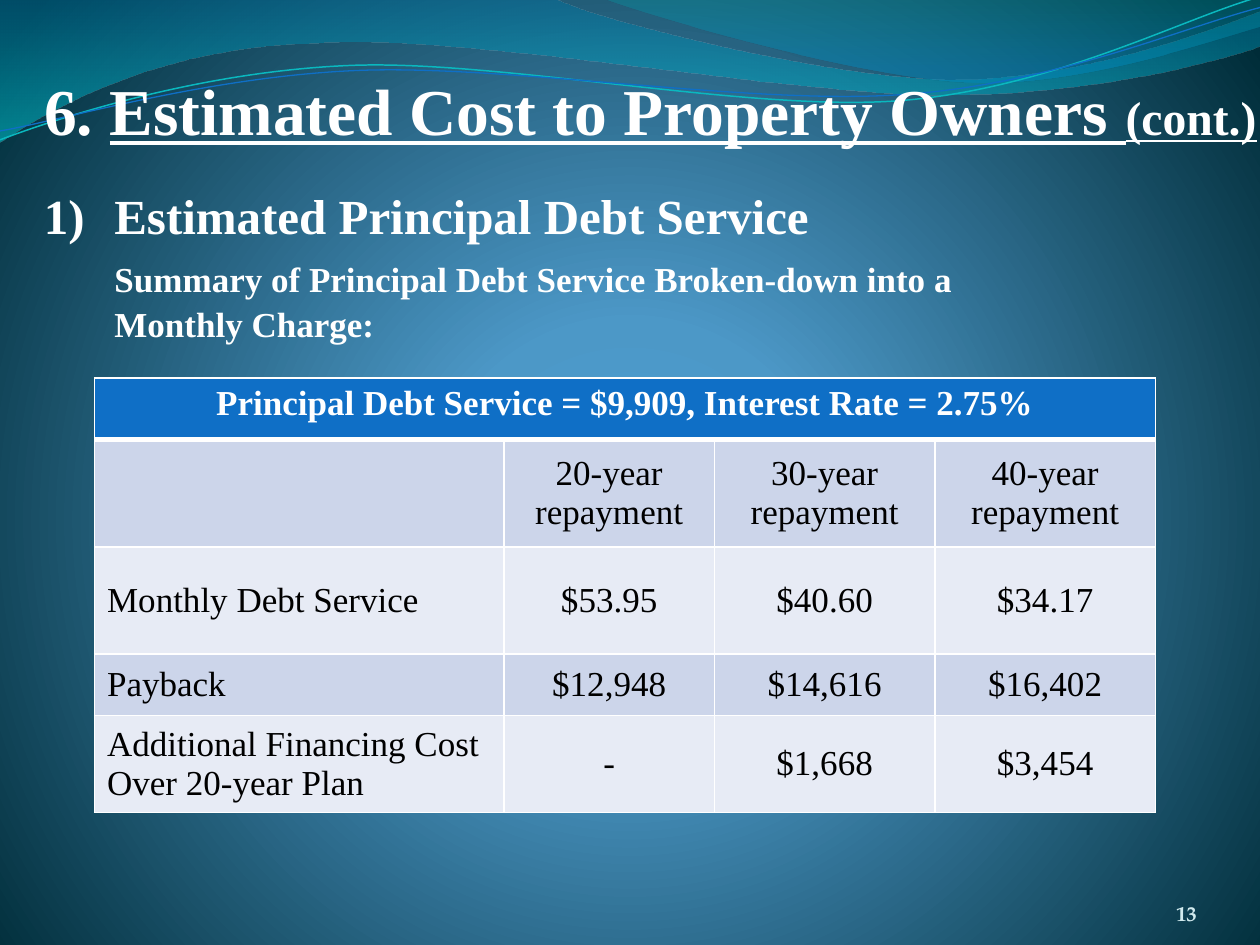
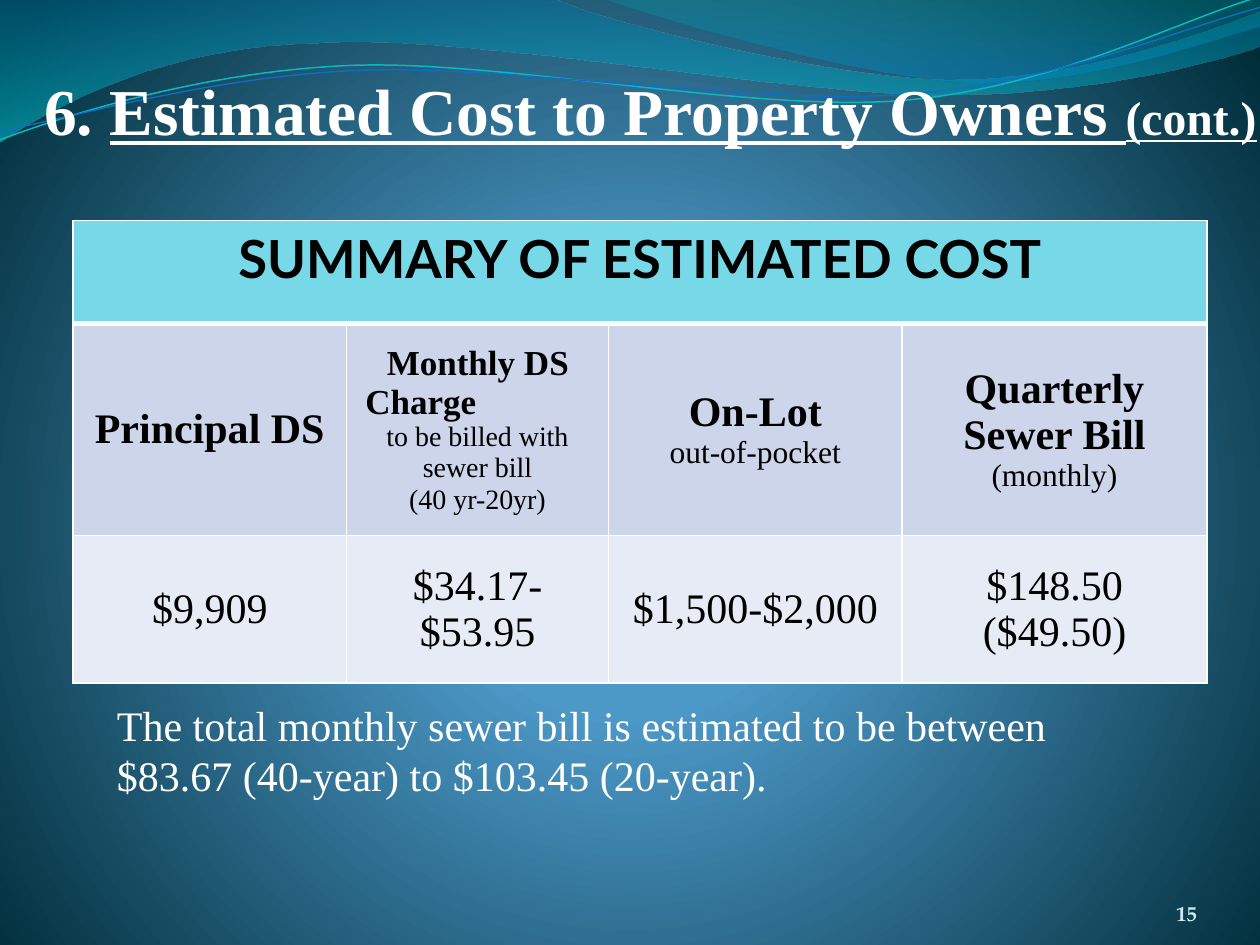
import math

import pptx
import pptx.util
import pptx.dml.color
import pptx.enum.text
import pptx.oxml
import pptx.oxml.ns

Inches, Pt = pptx.util.Inches, pptx.util.Pt
RGB = pptx.dml.color.RGBColor
ALIGN, ANCHOR = pptx.enum.text.PP_ALIGN, pptx.enum.text.MSO_ANCHOR
qn, nsdecls = pptx.oxml.ns.qn, pptx.oxml.ns.nsdecls

WHITE, BLACK = RGB.from_string("FFFFFF"), RGB.from_string("000000")
BLUE, AQUA = RGB.from_string("0F6FC6"), RGB.from_string("77D9E8")
TEAL, PALE = RGB.from_string("0AB8BF"), RGB.from_string("D1EAEE")
BANDS = RGB.from_string("CCD5EA"), RGB.from_string("E7EBF5")
SERIF, SANS, PAGELLA = "Times New Roman", "Lato", "TeX Gyre Pagella"

BACKDROP = (
    [(0, "4AA0D6", 100), (25, "4C98C7", 100), (100, "002C38", 100)],
    '<a:path path="circle"><a:fillToRect l="10000" t="110000" r="10000" b="100000"/></a:path>',
)
DOWN = '<a:lin ang="5400000" scaled="0"/>'
TILT = 357.3
WAVES = [
    {"start": (0, 0), "fill": ([(0, "0074A1", 45), (100, "00C6CF", 55)], DOWN), "segments": [
        (4.4, -0.01),
        (4.76, 0.17, 6.64, 0.63, 7.58, 0.63), (8.53, 0.63, 9.58, 0.26, 10, 0.09),
        (10.01, 0.36),
        (9.83, 0.44, 8.7, 0.76, 7.46, 0.75), (6.22, 0.75, 3.82, 0.28, 2.57, 0.34),
        (1.29, 0.36, 0.46, 0.83, -0.01, 1.13)]},
    {"start": (4.79, -0.01), "fill": ([(0, "00A1A9", 30), (80, "008BBF", 45)], DOWN), "segments": [
        (5.09, 0.11, 6.82, 0.62, 7.69, 0.65), (8.56, 0.69, 9.61, 0.32, 10, 0.21),
        (10, 0)]},
    {"start": (0, 1.11), "line": (TEAL, 0.85), "pivot": (4.99, 0.57), "segments": [
        (0.48, 0.93, 1.58, 0.57, 2.77, 0.52), (3.95, 0.47, 5.93, 0.89, 7.13, 0.8),
        (8.33, 0.71, 9.38, 0.15, 9.98, -0.02)]},
    {"start": (0, 1.04), "line": (BLUE, 0.75), "pivot": (5, 0.59), "segments": [
        (0.47, 0.96, 1.64, 0.61, 2.83, 0.56), (4.03, 0.51, 5.97, 0.84, 7.17, 0.75),
        (8.36, 0.67, 9.41, 0.21, 10, 0.06)]},
]

TITLE_STYLE = {"size": 37.4, "bold": True, "color": WHITE}
TITLE = [[("6. ", TITLE_STYLE),
          ("Estimated Cost to Property Owners ", {**TITLE_STYLE, "underline": True}),
          ("(cont.)", {**TITLE_STYLE, "underline": True, "size": 27.2})]]
INTRO = [
    [("Estimated Principal Debt Service", {"size": 28, "bold": True, "color": WHITE})],
    [("Summary of Principal Debt Service Broken-down into a Monthly Charge:",
      {"size": 20, "bold": True, "color": WHITE})],
]
NOTE = [[("The total monthly sewer bill is estimated to be between "
          "$83.67 (40-year) to $103.45 (20-year).", {"size": 24, "color": WHITE})]]


def lines(size, *texts, bold=False):
    return [[(text, {"size": size, "bold": bold})] for text in texts]


REPAYMENT = {
    "at": (0.75, 3), "cols": [3.25, 1.67, 1.75, 1.75], "rows": [0.49, 0.85, 0.85, 0.49, 0.77],
    "header": [[("Principal Debt Service = $9,909, Interest Rate = 2.75%",
                 {"size": 20, "bold": True, "color": WHITE})]],
    "header_fill": BLUE, "left_cells": {(2, 0), (3, 0), (4, 0)},
    "body": [[lines(20, text) if text else [] for text in row] for row in [
        ["", "20-year repayment", "30-year repayment", "40-year repayment"],
        ["Monthly Debt Service", "$53.95", "$40.60", "$34.17"],
        ["Payback", "$12,948", "$14,616", "$16,402"],
        ["Additional Financing Cost Over 20-year Plan", "-", "$1,668", "$3,454"],
    ]],
}
SUMMARY = {
    "at": (0.58, 1.75), "cols": [2.17, 2.08, 2.33, 2.42], "rows": [0.82, 1.68, 1.17],
    "header": [[("SUMMARY OF ESTIMATED COST", {"size": 30, "bold": True, "name": SANS})]],
    "header_fill": AQUA, "left_cells": set(),
    "body": [
        [lines(24, "Principal DS", bold=True),
         lines(20, "Monthly DS Charge", bold=True)
         + lines(16, "to be billed with sewer bill", "(40 yr-20yr)"),
         lines(24, "On-Lot", bold=True) + lines(18, "out-of-pocket"),
         lines(24, "Quarterly", "Sewer Bill", bold=True) + lines(18, "(monthly)")],
        [lines(24, "$9,909"), lines(24, "$34.17-$53.95"),
         lines(24, "$1,500-$2,000"), lines(24, "$148.50", "($49.50)")],
    ],
}


def write(tf, paragraphs, **layout):
    for i, runs in enumerate(paragraphs):
        p = tf.paragraphs[0] if i == 0 else tf.add_paragraph()
        for key, value in layout.items():
            setattr(p, key, value)
        for text, style in runs:
            r = p.add_run()
            r.text = text
            font = {"name": SERIF, "color": BLACK, "bold": False, **style}
            r.font.color.rgb = font.pop("color")
            r.font.size = Pt(font.pop("size"))
            for key, value in font.items():
                setattr(r.font, key, value)


def indent(p, left, first):
    pPr = p._p.get_or_add_pPr()
    pPr.set("marL", str(Inches(left)))
    pPr.set("indent", str(Inches(first)))
    return pPr


def paint_gradient(owner, fill, stops, direction):
    fill.background()
    gs = "".join(
        f'<a:gs pos="{pos * 1000}"><a:srgbClr val="{color}"><a:alpha val="{alpha * 1000}"/>'
        f'</a:srgbClr></a:gs>' for pos, color, alpha in stops)
    grad = pptx.oxml.parse_xml(
        f'<a:gradFill {nsdecls("a")} rotWithShape="1"><a:gsLst>{gs}</a:gsLst>{direction}</a:gradFill>')
    blank = next(owner.element.iter(qn("a:noFill")))
    blank.getparent().replace(blank, grad)


def place(point, pivot):
    x, y = point
    if pivot:
        angle = math.radians(360 - TILT)
        dx, dy = x - pivot[0], y - pivot[1]
        x = pivot[0] + dx * math.cos(angle) - dy * math.sin(angle)
        y = pivot[1] + dx * math.sin(angle) + dy * math.cos(angle)
    return Inches(x), Inches(y)


def add_wave(s, wave):
    pivot = wave.get("pivot")
    segments = [[place(seg[i:i + 2], pivot) for i in range(0, len(seg), 2)]
                for seg in wave["segments"]]
    builder = s.shapes.build_freeform(*place(wave["start"], pivot), scale=1.0)
    builder.add_line_segments([seg[-1] for seg in segments], close="fill" in wave)
    sp = builder.convert_to_shape()
    sp.shadow.inherit = False
    for step, seg in zip(list(sp.element.iter(qn("a:lnTo"))), segments):
        if len(seg) == 3:
            pts = "".join(f'<a:pt x="{x - sp.left}" y="{y - sp.top}"/>' for x, y in seg)
            step.getparent().replace(step, pptx.oxml.parse_xml(
                f'<a:cubicBezTo {nsdecls("a")}>{pts}</a:cubicBezTo>'))
    if "fill" in wave:
        paint_gradient(sp, sp.fill, *wave["fill"])
        sp.line.fill.background()
    else:
        sp.fill.background()
        sp.rotation = TILT
        color, width = wave["line"]
        sp.line.color.rgb, sp.line.width = color, Pt(width)


def add_text(s, box, paragraphs, **layout):
    tf = s.shapes.add_textbox(*map(Inches, box)).text_frame
    tf.word_wrap = True
    write(tf, paragraphs, **layout)
    return tf


def add_base(prs, number):
    s = prs.slides.add_slide(prs.slide_layouts[5])
    paint_gradient(s, s.background.fill, *BACKDROP)
    for wave in WAVES:
        add_wave(s, wave)
    title = s.shapes.title
    title.left, title.top, title.width, title.height = map(Inches, (0.25, 0.58, 10, 0.83))
    title.element.getparent().append(title.element)
    tf = title.text_frame
    tf.auto_size, tf.word_wrap = pptx.enum.text.MSO_AUTO_SIZE.NONE, True
    tf.vertical_anchor = ANCHOR.TOP
    write(tf, TITLE, alignment=ALIGN.LEFT, line_spacing=0.9)
    number_style = {"size": 12, "name": PAGELLA, "color": PALE, "bold": True}
    tf = add_text(s, (8.67, 6.95, 0.83, 0.4), [[(number, number_style)]], alignment=ALIGN.RIGHT)
    tf.margin_left = tf.margin_top = tf.margin_right = tf.margin_bottom = 0
    tf.vertical_anchor = ANCHOR.BOTTOM
    return s


def set_borders(cell, row):
    widths = {"L": 1, "R": 1, "T": 3 if row == 1 else 1, "B": 3 if row == 0 else 1}
    for i, (side, width) in enumerate(widths.items()):
        cell._tc.get_or_add_tcPr().insert(i, pptx.oxml.parse_xml(
            f'<a:ln{side} {nsdecls("a")} w="{width * 12700}"><a:solidFill>'
            f'<a:srgbClr val="{WHITE}"/></a:solidFill></a:ln{side}>'))


def add_cost_table(s, spec):
    cols, rows = spec["cols"], spec["rows"]
    box = *spec["at"], sum(cols), sum(rows)
    table = s.shapes.add_table(len(rows), len(cols), *map(Inches, box)).table
    for column, width in zip(table.columns, cols):
        column.width = Inches(width)
    for row, height in zip(table.rows, rows):
        row.height = Inches(height)
    table.cell(0, 0).merge(table.cell(0, len(cols) - 1))
    write(table.cell(0, 0).text_frame, spec["header"], alignment=ALIGN.CENTER)
    for i in range(len(rows)):
        for j in range(len(cols)):
            cell = table.cell(i, j)
            cell.fill.solid()
            cell.fill.fore_color.rgb = BANDS[(i - 1) % 2] if i else spec["header_fill"]
            set_borders(cell, i)
            if i:
                cell.vertical_anchor = ANCHOR.MIDDLE
                align = ALIGN.LEFT if (i, j) in spec["left_cells"] else ALIGN.CENTER
                write(cell.text_frame, spec["body"][i - 1][j], alignment=align)
    return table


def add_intro(s):
    tf = add_text(s, (0.25, 1.42, 7.83, 1.38), INTRO)
    heading, summary = tf.paragraphs
    summary.space_before, summary.line_spacing = Pt(6), 1.07
    indent(summary, 0.56, 0)
    indent(heading, 0.56, -0.56).append(
        pptx.oxml.parse_xml(f'<a:buAutoNum {nsdecls("a")} type="arabicParenR"/>'))


def main():
    prs = pptx.Presentation()
    prs.slide_width, prs.slide_height = Inches(10), Inches(7.5)
    s = add_base(prs, "13")
    add_intro(s)
    add_cost_table(s, REPAYMENT)
    s = add_base(prs, "15")
    charge = add_cost_table(s, SUMMARY).cell(1, 1).text_frame.paragraphs[0]
    charge.alignment = ALIGN.LEFT
    indent(charge, 0.05, 0.17)
    add_text(s, (0.83, 5.5, 8.42, 0.91), NOTE)
    prs.save("out.pptx")


if __name__ == "__main__":
    main()
